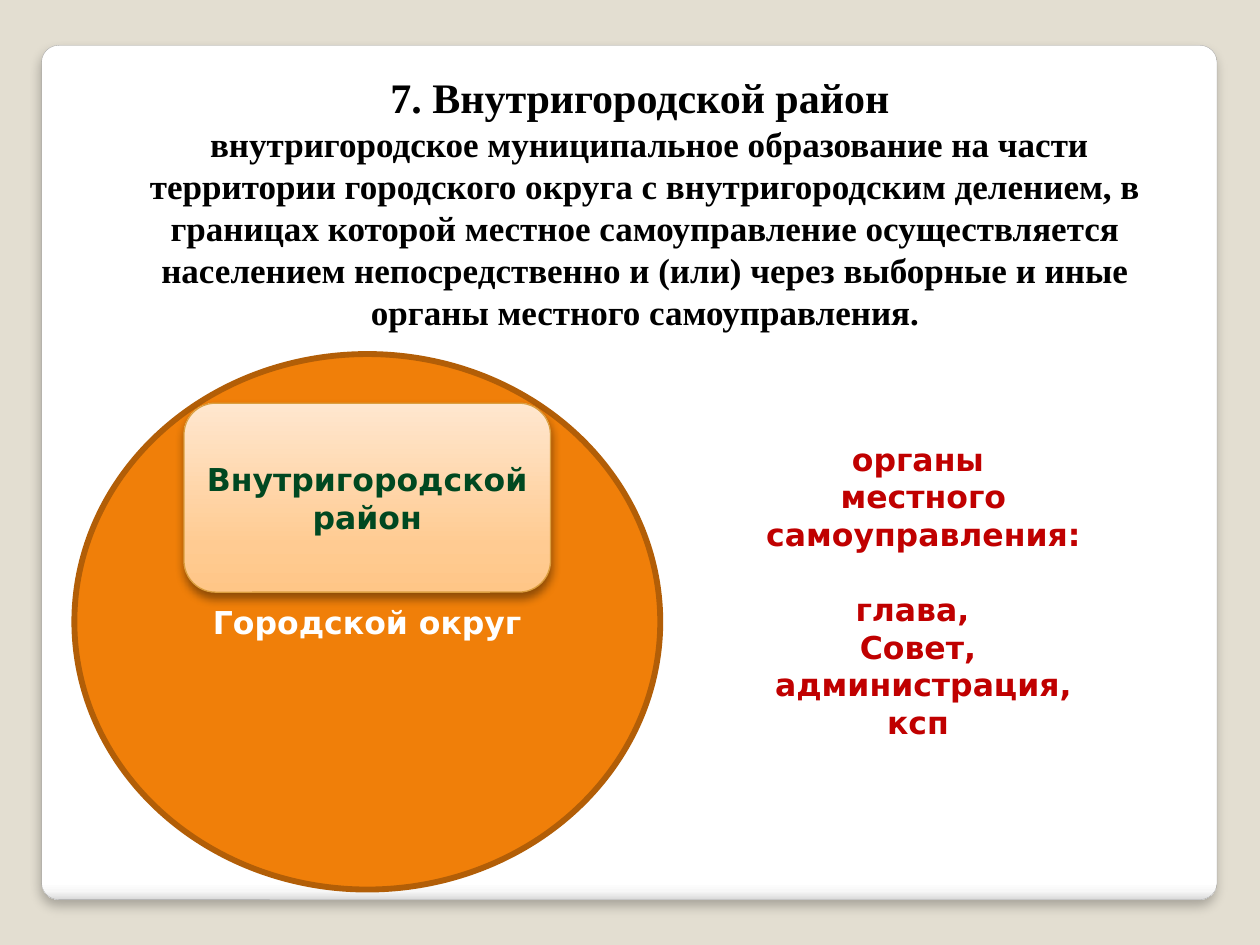
from lxml import etree
from pptx import Presentation
from pptx.dml.color import RGBColor
from pptx.enum.shapes import MSO_SHAPE
from pptx.enum.text import MSO_ANCHOR, PP_ALIGN
from pptx.oxml.ns import qn
from pptx.util import Inches, Pt

ROUNDED = MSO_SHAPE.ROUNDED_RECTANGLE
OVAL = MSO_SHAPE.OVAL
CENTER = PP_ALIGN.CENTER
MIDDLE = MSO_ANCHOR.MIDDLE

COLORS = {
    "background": "E3DED1",
    "card_line": "A4A4A4",
    "title": "000000",
    "okrug": "F07F09",
    "okrug_line": "B25E07",
    "okrug_text": "FFFFFF",
    "district_line": "DB9E3F",
    "district_text": "004821",
    "bodies": "C00000",
    "shadow": "000000",
}
CARD_STOPS = [(0, "FFFFFF"), (98, "FFFFFF"), (99, "F7F7F7"), (100, "DADADA")]
DISTRICT_STOPS = [(0, "FFC687"), (25, "FFCB92"), (100, "FFE7CF")]
SERIF = "Times New Roman"
SANS = "DejaVu Sans"


class SlideBuilder:
    def __init__(self, slide):
        self.slide = slide
        fill = slide.background.fill
        fill.solid()
        fill.fore_color.rgb = self.rgb("background")

    def rgb(self, name):
        return RGBColor.from_string(COLORS[name])

    def shape(self, kind, box, line, width):
        shape = self.slide.shapes.add_shape(kind, *map(Inches, box))
        shape.shadow.inherit = False
        shape.line.color.rgb = self.rgb(line)
        shape.line.width = Pt(width)
        return shape

    def solid(self, shape, color):
        shape.fill.solid()
        shape.fill.fore_color.rgb = self.rgb(color)

    def gradient(self, shape, stops, angle):
        shape.fill.gradient()
        shape.fill.gradient_angle = angle
        stop_list = next(shape.element.spPr.iter(qn("a:gsLst")))
        for old_stop in list(stop_list):
            stop_list.remove(old_stop)
        for position, color in stops:
            stop = etree.SubElement(stop_list, qn("a:gs"), pos=str(position * 1000))
            etree.SubElement(stop, qn("a:srgbClr"), val=color)

    def shadow(self, shape, opacity, blur, distance):
        effects = shape.element.spPr.find(qn("a:effectLst"))
        outer = etree.SubElement(
            effects, qn("a:outerShdw"), blurRad=str(Pt(blur)),
            dist=str(Pt(distance)), dir="5400000", algn="t", rotWithShape="0")
        color = etree.SubElement(outer, qn("a:srgbClr"), val=COLORS["shadow"])
        etree.SubElement(color, qn("a:alpha"), val=str(opacity * 1000))

    def add_lines(self, shape, lines, color, font):
        frame = shape.text_frame
        frame.word_wrap = True
        for index, (text, size, gap) in enumerate(lines):
            paragraph = frame.add_paragraph() if index else frame.paragraphs[0]
            paragraph.alignment = CENTER
            paragraph.space_before = Pt(gap)
            run = paragraph.add_run()
            run.text = text
            run.font.size = Pt(size)
            run.font.name = font
            run.font.bold = True
            run.font.color.rgb = self.rgb(color)

    def label(self, shape, text, color):
        shape.text_frame.vertical_anchor = MIDDLE
        self.add_lines(shape, [(text, 18, 0)], color, SANS)

    def text(self, box, lines, color, font):
        textbox = self.slide.shapes.add_textbox(*map(Inches, box))
        self.add_lines(textbox, lines, color, font)


def main():
    deck = Presentation()
    deck.slide_width = Inches(10)
    deck.slide_height = Inches(7.5)
    builder = SlideBuilder(deck.slides.add_slide(deck.slide_layouts[6]))

    card = builder.shape(ROUNDED, (0.33, 0.36, 9.33, 6.78), "card_line", 0.16)
    card.adjustments[0] = 0.02
    builder.gradient(card, CARD_STOPS, 270)
    builder.shadow(card, 25, 6, 4)

    builder.text((0.83, 0.52, 8.58, 2.19), [
        ("7. Внутригородской район ", 24, 0),
        (" внутригородское муниципальное образование на части территории "
         "городского округа с внутригородским делением, в границах которой "
         "местное самоуправление осуществляется населением непосредственно "
         "и (или) через выборные и иные органы местного самоуправления.", 20, 0),
    ], "title", SERIF)

    okrug = builder.shape(OVAL, (0.59, 2.81, 4.65, 4.25), "okrug_line", 3.35)
    builder.solid(okrug, "okrug")
    builder.label(okrug, "Городской округ", "okrug_text")

    district = builder.shape(ROUNDED, (1.46, 3.2, 2.91, 1.5), "district_line", 0.75)
    builder.gradient(district, DISTRICT_STOPS, 90)
    builder.shadow(district, 40, 5.2, 3)
    builder.label(district, "Внутригородской район", "district_text")

    builder.text((5.79, 3.44, 2.99, 2.52), [
        ("органы", 18, 0),
        (" местного", 18, 0),
        (" самоуправления:", 18, 0),
        ("глава, ", 18, 21),
        ("Совет,", 18, 0),
        (" администрация, ксп", 18, 0),
    ], "bodies", SANS)

    deck.save("out.pptx")


if __name__ == "__main__":
    main()
